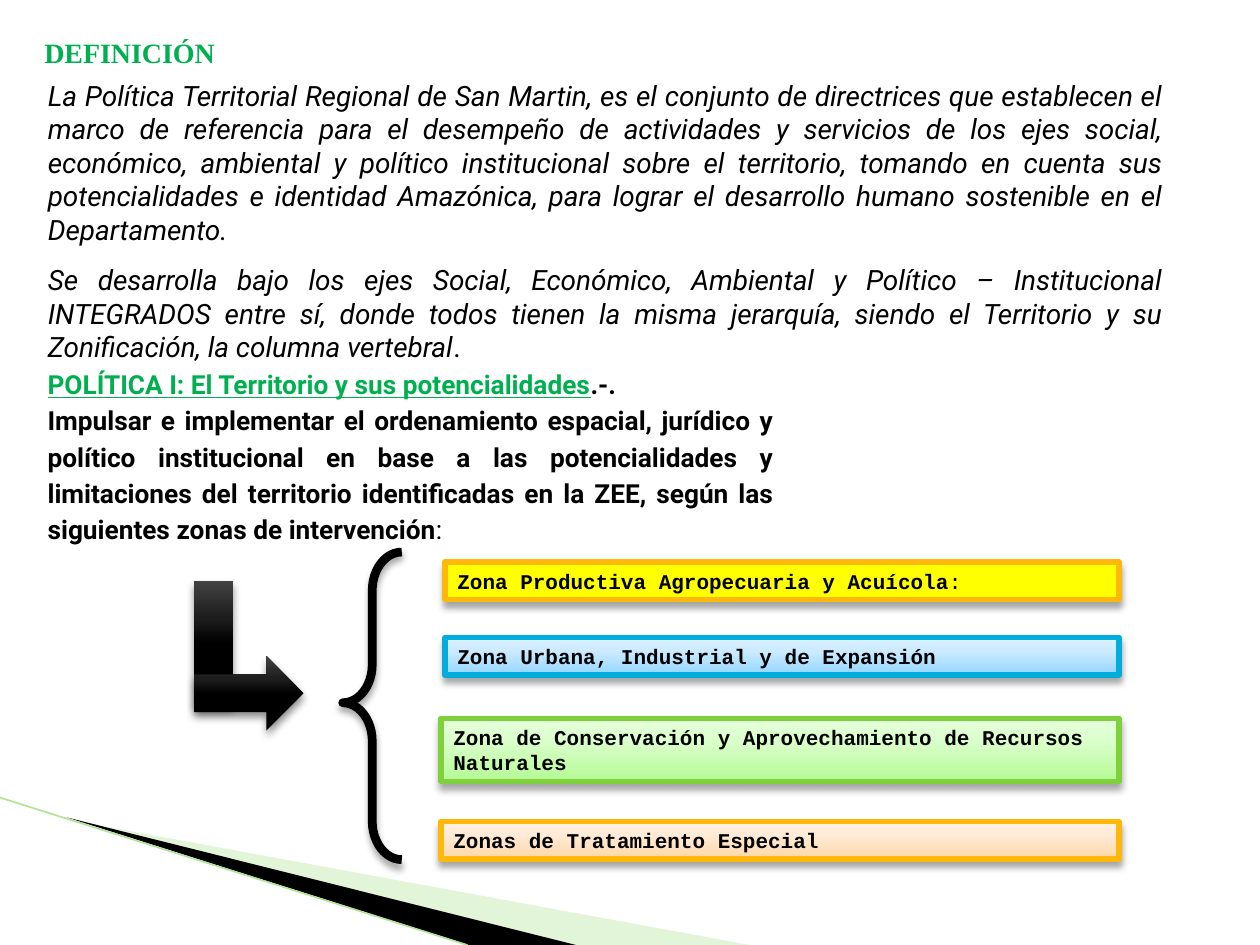
from lxml.etree import SubElement
from pptx import Presentation
from pptx.dml.color import RGBColor
from pptx.enum.shapes import MSO_CONNECTOR, MSO_SHAPE
from pptx.enum.text import MSO_ANCHOR, MSO_AUTO_SIZE, PP_ALIGN
from pptx.oxml.ns import qn
from pptx.util import Cm, Pt

BLACK, GREEN = "000000", "00B050"
TITLE = [[("DEFINICIÓN", {"bold": True, "color": GREEN})]]
BODY = [
    [("La Política Territorial Regional de San Martin, es el conjunto de directrices que "
      "establecen el marco de referencia para el desempeño de actividades y servicios de los "
      "ejes social, económico, ambiental y político institucional sobre el territorio, tomando "
      "en cuenta sus potencialidades e identidad Amazónica, para lograr el desarrollo humano "
      "sostenible en el Departamento.", {"italic": True})],
    [("Se desarrolla bajo los ejes Social, Económico, Ambiental y Político – Institucional "
      "INTEGRADOS entre sí, donde todos tienen la misma jerarquía, siendo el Territorio y su "
      "Zonificación, la columna vertebral", {"italic": True}), (".", {"italic": False})],
]
POLICY = [
    [("POLÍTICA I: El Territorio y sus potencialidades",
      {"bold": True, "underline": True, "color": GREEN}), (".-.", {"bold": True})],
    [("Impulsar e implementar el ordenamiento espacial, jurídico y político institucional en "
      "base a las potencialidades y limitaciones del territorio identificadas en la ZEE, según "
      "las siguientes zonas de intervención", {"bold": True}), (":", {"bold": False})],
]
RIGHT = 22.56
ZONES = [
    (8.97, 11.33, 0.76, "FEB80A", ["FFFF00"],
     [("Zona Productiva Agropecuaria y Acuícola", {"bold": True}), (":", {"bold": False})]),
    (8.97, 12.85, 0.76, "00ADDC", ["93D6FF", "CDEBFF", "DCF1FF"],
     [("Zona Urbana, Industrial y de Expansión", {"bold": True})]),
    (8.89, 14.48, 1.27, "7FD13B", ["B5FA95", "DBFFCC", "E5FFDB"],
     [("Zona de Conservación y Aprovechamiento de Recursos Naturales", {"bold": True})]),
    (8.89, 16.56, 0.76, "FEB80A", ["FFD7A7", "FFEBD7", "FFF1E3"],
     [("Zonas de Tratamiento Especial", {"bold": True})]),
]
DARK = [(0, BLACK), (50, BLACK), (70, "1D1D1D"), (100, "424242")]
ARROW = [
    (MSO_SHAPE.RECTANGLE, (3.91, 11.71, 0.79, 2.51)),
    (MSO_SHAPE.RIGHT_ARROW, (3.91, 13.23, 2.21, 1.5)),
]
WEDGES = [
    ("B8E7A1", 40, [(1.4, 16.53), (15.11, 19.05), (11.58, 19.05)]),
    (BLACK, 100, [(1.35, 16.48), (11.61, 19.05), (9.45, 19.05)]),
]


def paint(fill, code):
    fill.solid()
    fill.fore_color.rgb = RGBColor.from_string(code)


def put_color(node, code, alpha):
    clr = SubElement(node, qn("a:srgbClr"), val=code)
    SubElement(clr, qn("a:alpha"), val=str(alpha * 1000))


def blend(shape, stops):
    shape.fill.gradient()
    shape.fill.gradient_angle = 90
    group = shape.element.spPr.find(".//" + qn("a:gsLst"))
    for old in list(group):
        group.remove(old)
    for pos, code in stops:
        stop = SubElement(group, qn("a:gs"), pos=str(pos * 1000))
        put_color(stop, code, 100)


def shade(shape, alpha, blur, dist):
    shape.shadow.inherit = False
    group = shape.element.spPr.find(qn("a:effectLst"))
    node = SubElement(group, qn("a:outerShdw"), blurRad=str(Pt(blur)), dist=str(Pt(dist)),
                      dir="5400000", rotWithShape="0")
    put_color(node, BLACK, alpha)


def place(shape, box):
    shape.left, shape.top, shape.width, shape.height = map(Cm, box)


def write(shape, paras, font, size, align=PP_ALIGN.LEFT, gap=0, lead=1.0, wrap=True):
    frame = shape.text_frame
    frame.auto_size = MSO_AUTO_SIZE.NONE
    frame.word_wrap = wrap
    frame.vertical_anchor = MSO_ANCHOR.TOP
    for i, runs in enumerate(paras):
        para = frame.add_paragraph() if i else frame.paragraphs[0]
        para.alignment = align
        para.line_spacing = lead
        para.space_before = Pt(gap if i else 0)
        for text, look in runs:
            run = para.add_run()
            run.text = text
            run.font.name = font
            run.font.size = Pt(size)
            run.font.bold = look.get("bold", False)
            run.font.italic = look.get("italic", False)
            run.font.underline = look.get("underline", False)
            paint(run.font.fill, look.get("color", BLACK))


def add_wedges(shapes):
    for code, alpha, points in WEDGES:
        first, *rest = [(Cm(x), Cm(y)) for x, y in points]
        pen = shapes.build_freeform(*first)
        pen.add_line_segments(rest)
        wedge = pen.convert_to_shape()
        paint(wedge.fill, code)
        clr = wedge.element.spPr.find(".//" + qn("a:srgbClr"))
        SubElement(clr, qn("a:alpha"), val=str(alpha * 1000))
        wedge.line.fill.background()
        wedge.shadow.inherit = False
    edge = shapes.add_connector(MSO_CONNECTOR.STRAIGHT, 0, Cm(16.08), Cm(9.42), Cm(19.05))
    paint(edge.line.fill, "B1E399")
    edge.line.width = Pt(0.95)
    SubElement(edge.element.spPr, qn("a:effectLst"))


def add_zones(shapes):
    for left, top, high, rim, tones, runs in ZONES:
        box = shapes.add_shape(MSO_SHAPE.RECTANGLE,
                               *map(Cm, (left, top, RIGHT - left, high)))
        if len(tones) == 1:
            paint(box.fill, tones[0])
        else:
            blend(box, zip((0, 65, 100), tones))
        paint(box.line.fill, rim)
        box.line.width = Pt(3)
        shade(box, 35, 4, 3)
        write(box, [runs], "Courier New", 12)


def add_signs(shapes):
    brace = shapes.add_shape(MSO_SHAPE.LEFT_BRACE, *map(Cm, (6.91, 11.13, 1.19, 6.2)))
    brace.adjustments[0], brace.adjustments[1] = 0.65, 0.49
    brace.fill.background()
    paint(brace.line.fill, BLACK)
    brace.line.width = Pt(5)
    shade(brace, 35, 4, 3)
    for kind, box in ARROW:
        part = shapes.add_shape(kind, *map(Cm, box))
        blend(part, DARK)
        part.line.fill.background()
        shade(part, 45, 5, 3)


def main():
    deck = Presentation()
    deck.slide_width, deck.slide_height = Cm(25.4), Cm(19.05)
    slide = deck.slides.add_slide(deck.slide_layouts[1])
    shapes = slide.shapes
    add_wedges(shapes)

    title, body = shapes.title, slide.placeholders[1]
    place(title, (0.64, 0.58, 6.86, 0.94))
    write(title, TITLE, "Times New Roman", 16, wrap=False)
    place(body, (0.71, 1.45, 22.99, 5.46))
    write(body, BODY, "Roboto", 16, PP_ALIGN.JUSTIFY, gap=9.4)
    for para in body.text_frame.paragraphs:
        props = para._p.get_or_add_pPr()
        props.set("marL", "0")
        props.set("indent", "0")
        SubElement(props, qn("a:buNone"))

    policy = shapes.add_textbox(*map(Cm, (0.71, 7.21, 15.14, 3.91)))
    write(policy, POLICY, "Roboto", 15, PP_ALIGN.JUSTIFY, lead=1.15)
    add_zones(shapes)
    add_signs(shapes)
    deck.save("out.pptx")


if __name__ == "__main__":
    main()
